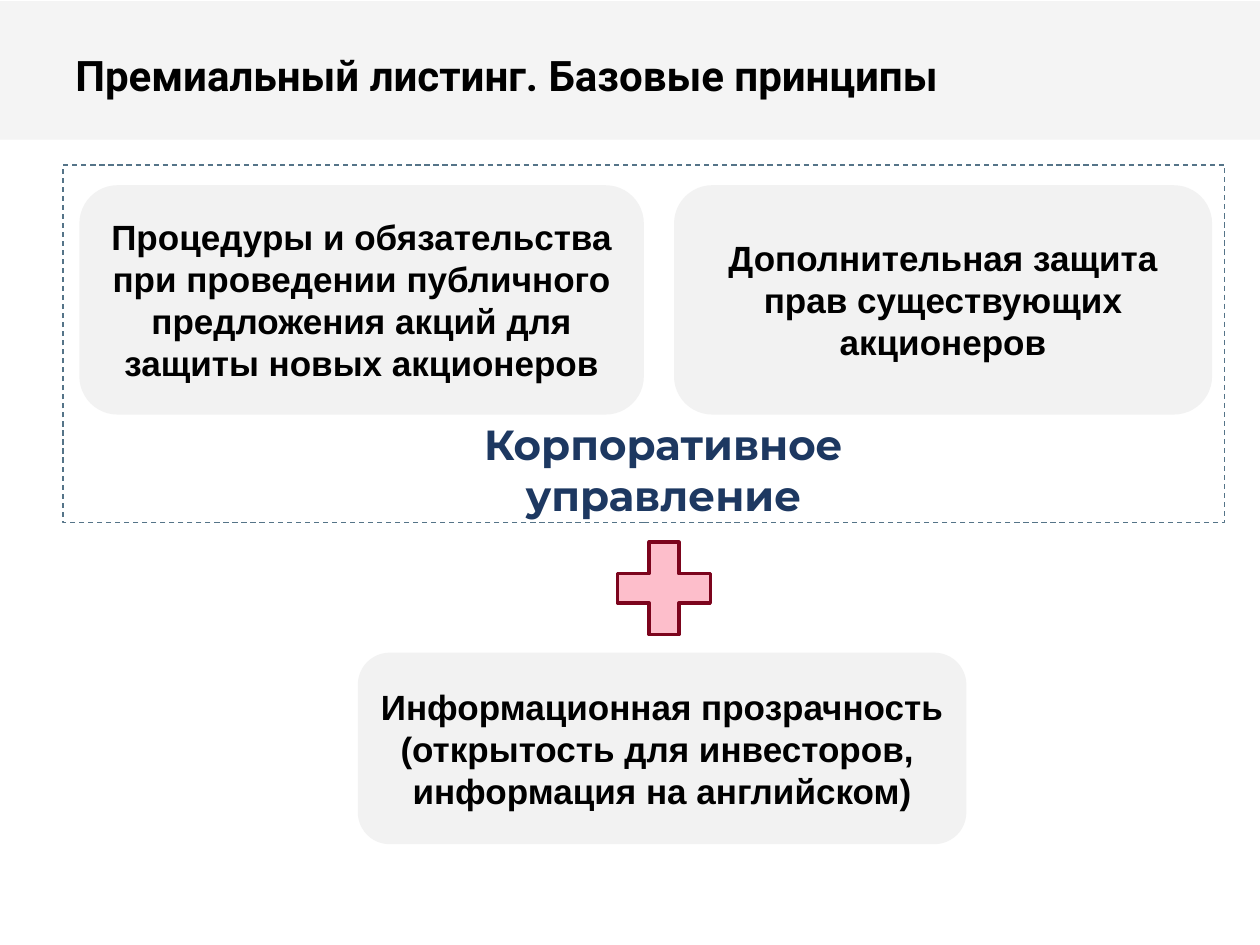
from pptx import Presentation
from pptx.dml.color import RGBColor
from pptx.enum.dml import MSO_LINE
from pptx.enum.shapes import MSO_SHAPE
from pptx.enum.text import MSO_ANCHOR, PP_ALIGN
from pptx.util import Inches, Pt

RECTANGLE = MSO_SHAPE.RECTANGLE
ROUNDED = MSO_SHAPE.ROUNDED_RECTANGLE
PLUS = MSO_SHAPE.MATH_PLUS
DASH = MSO_LINE.DASH
MIDDLE = MSO_ANCHOR.MIDDLE
LEFT, CENTER = PP_ALIGN.LEFT, PP_ALIGN.CENTER

COLORS = {
    "band": "F4F4F4",
    "card": "F2F2F2",
    "text": "000000",
    "heading": "1D3861",
    "frame": "557488",
    "plus": "FDBECB",
    "plus_line": "7C041D",
}

CARDS = [
    ((0.63, 1.47, 4.48, 1.82),
     ["Процедуры и обязательства при проведении публичного предложения "
      "акций для защиты новых акционеров"]),
    ((5.35, 1.47, 4.27, 1.82),
     ["Дополнительная защита прав существующих акционеров"]),
    ((2.84, 5.18, 4.83, 1.52),
     ["Информационная прозрачность",
      "(открытость для инвесторов, ",
      "информация на английском)"]),
]


def color(name):
    """Return the palette colour with the given name."""
    return RGBColor.from_string(COLORS[name])


def write_text(shape, lines, size=20, font="Arial", fill="text", align=CENTER):
    """Write bold, vertically centred paragraphs into a shape."""
    frame = shape.text_frame
    frame.word_wrap = True
    frame.vertical_anchor = MIDDLE
    for index, line in enumerate(lines):
        paragraph = frame.add_paragraph() if index else frame.paragraphs[0]
        paragraph.alignment = align
        run = paragraph.add_run()
        run.text = line
        run.font.name = font
        run.font.size = Pt(size)
        run.font.bold = True
        run.font.color.rgb = color(fill)


def add_panel(slide, kind, box, fill=None, line=None, width=0, dash=None):
    """Add a preset shape with an optional fill and outline."""
    shape = slide.shapes.add_shape(kind, *map(Inches, box))
    shape.shadow.inherit = False
    if fill:
        shape.fill.solid()
        shape.fill.fore_color.rgb = color(fill)
    else:
        shape.fill.background()
    if line:
        shape.line.color.rgb = color(line)
        shape.line.width = Pt(width)
        if dash:
            shape.line.dash_style = dash
    else:
        shape.line.fill.background()
    return shape


def add_label(slide, box, text, **text_format):
    """Add a text box holding one paragraph."""
    label = slide.shapes.add_textbox(*map(Inches, box))
    write_text(label, [text], **text_format)


def main():
    """Build the slide on the principles of premium listing."""
    presentation = Presentation()
    presentation.slide_width = Inches(10)
    presentation.slide_height = Inches(7.5)
    slide = presentation.slides.add_slide(presentation.slide_layouts[6])

    add_panel(slide, RECTANGLE, (0, 0.01, 10, 1.1), fill="band")
    for box, lines in CARDS:
        write_text(add_panel(slide, ROUNDED, box, fill="card"), lines)
    add_panel(slide, PLUS, (4.77, 4.17, 1, 1), fill="plus", line="plus_line", width=2)
    add_panel(slide, RECTANGLE, (0.5, 1.31, 9.22, 2.84), line="frame", dash=DASH)
    add_label(slide, (3.17, 3.3, 4.19, 0.85), "Корпоративное управление",
              size=24, font="Montserrat", fill="heading")
    add_label(slide, (0.5, 0.16, 9, 0.86), "Премиальный листинг. Базовые принципы",
              size=24, font="Roboto", align=LEFT)

    presentation.save("out.pptx")


if __name__ == "__main__":
    main()
